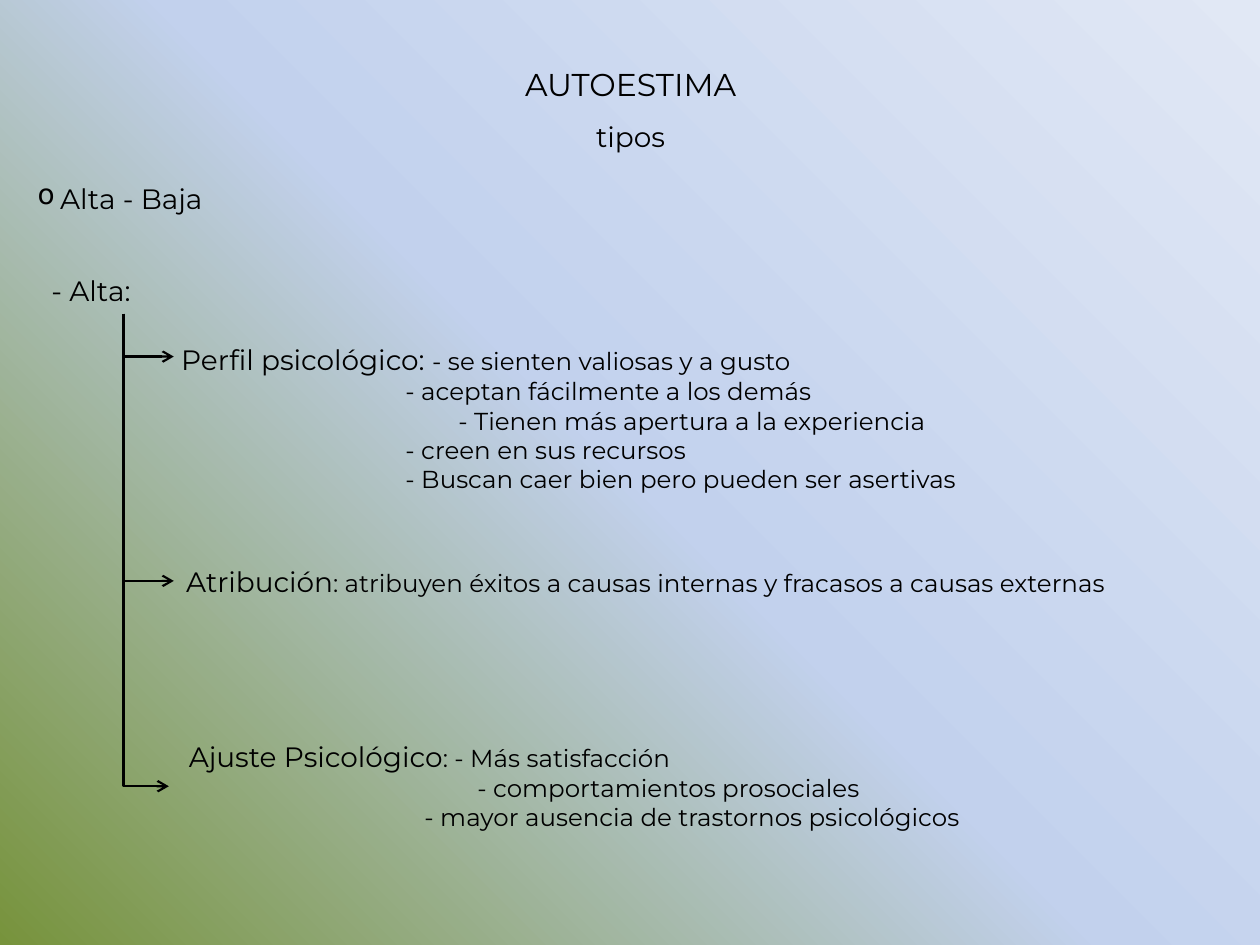
from lxml import etree
from pptx import Presentation
from pptx.dml.color import RGBColor
from pptx.enum.shapes import MSO_CONNECTOR
from pptx.enum.text import MSO_AUTO_SIZE, PP_ALIGN
from pptx.oxml import parse_xml
from pptx.oxml.ns import nsdecls, qn
from pptx.util import Inches, Pt

BLACK = RGBColor(0x00, 0x00, 0x00)
GREEN = RGBColor(0x77, 0x93, 0x3C)
BLUE = RGBColor(0xC2, 0xD1, 0xED)
PALE = RGBColor(0xE1, 0xE8, 0xF5)
FONT = "Montserrat"
TRUNK_X, TRUNK_TOP = 0.98, 2.49


def add_text(left, top, width, height, lines, align=PP_ALIGN.JUSTIFY, spacing=None):
    """Each line is (indent in inches, [(text, size in points), ...])."""
    box = slide.shapes.add_textbox(Inches(left), Inches(top), Inches(width), Inches(height))
    frame = box.text_frame
    frame.word_wrap = True
    frame.auto_size = MSO_AUTO_SIZE.SHAPE_TO_FIT_TEXT
    for number, (indent, runs) in enumerate(lines):
        paragraph = frame.add_paragraph() if number else frame.paragraphs[0]
        paragraph.alignment = align
        paragraph.line_spacing = spacing
        if indent:
            paragraph._p.get_or_add_pPr().set("marL", str(Inches(indent)))
        for text, size in runs:
            run = paragraph.add_run()
            run.text = text
            run.font.size = Pt(size)
            run.font.name = FONT
            run.font.color.rgb = BLACK
    return frame


def add_branch(end_x, end_y):
    """Arrow that goes down the trunk and then turns right."""
    drop, reach = end_y - TRUNK_TOP, end_x - TRUNK_X
    connector = slide.shapes.add_connector(MSO_CONNECTOR.ELBOW, 0, 0, 0, 0)
    # The frame is lying down: turned by 270 degrees around its centre
    connector.left = Inches(TRUNK_X + (reach - drop) / 2)
    connector.top = Inches(TRUNK_TOP + (drop - reach) / 2)
    connector.width, connector.height = Inches(drop), Inches(reach)
    properties = connector._element.spPr
    transform = properties.find(qn("a:xfrm"))
    transform.set("rot", "16200000")
    transform.set("flipH", "1")
    properties.find(qn("a:prstGeom")).set("prst", "bentConnector2")
    connector.line.color.rgb = BLACK
    connector.line.width = Pt(1.25)
    line = properties.find(qn("a:ln"))
    etree.SubElement(line, qn("a:tailEnd"), type="arrow")
    etree.SubElement(properties, qn("a:effectLst"))


presentation = Presentation()
presentation.slide_width, presentation.slide_height = Inches(10), Inches(7.5)
slide = presentation.slides.add_slide(presentation.slide_layouts[6])

# Background: gradient spreading from the bottom left corner
stops = "".join(
    f'<a:gs pos="{position * 1000}"><a:srgbClr val="{color}"/></a:gs>'
    for position, color in ((0, GREEN), (50, BLUE), (100, PALE))
)
fill = slide.background.fill
fill.gradient()
background = slide._element.cSld.bg.bgPr
background.replace(background.find(qn("a:gradFill")), parse_xml(
    f'<a:gradFill {nsdecls("a")} rotWithShape="1"><a:gsLst>{stops}</a:gsLst>'
    '<a:path path="circle"><a:fillToRect t="100000" r="100000"/></a:path></a:gradFill>'
))

# Headings
add_text(0.28, 0.32, 9.45, 0.96,
         [(0, [("AUTOESTIMA", 18)]), (0, [("tipos", 16)])], PP_ALIGN.CENTER, 1.5)
types_frame = add_text(0.2, 1.39, 6.06, 0.37, [(0.18, [("Alta - Baja", 16)])])
bullet_properties = types_frame.paragraphs[0]._p.get_or_add_pPr()
bullet_properties.set("indent", str(Inches(-0.18)))
etree.SubElement(bullet_properties, qn("a:buChar"), char="o")
add_text(0.31, 2.12, 1.34, 0.37, [(0, [("- Alta:", 16)])])

# Branches
for end_x, end_y in ((1.38, 2.83), (1.34, 6.24), (1.38, 4.61)):
    add_branch(end_x, end_y)

add_text(1.34, 2.67, 7.84, 1.55, [
    (0, [("Perfil psicológico: ", 16), ("- se sienten valiosas y a gusto", 14)]),
    (1.78, [("- aceptan fácilmente a los demás", 14)]),
    (2.2, [("- Tienen más apertura a la experiencia", 14)]),
    (1.78, [("- creen en sus recursos", 14)]),
    (1.78, [("- Buscan caer bien pero pueden ser asertivas", 14)]),
])
add_text(1.38, 4.43, 8.74, 0.37, [
    (0, [("Atribución", 16),
         (": atribuyen éxitos a causas internas y fracasos a causas externas", 14)]),
])
add_text(1.34, 5.82, 8.39, 0.84, [
    (0.06, [("Ajuste Psicológico", 16), (": - Más satisfacción", 14)]),
    (2.35, [("- comportamientos prosociales", 14)]),
    (1.93, [("- mayor ausencia de trastornos psicológicos", 14)]),
])

presentation.save("out.pptx")
